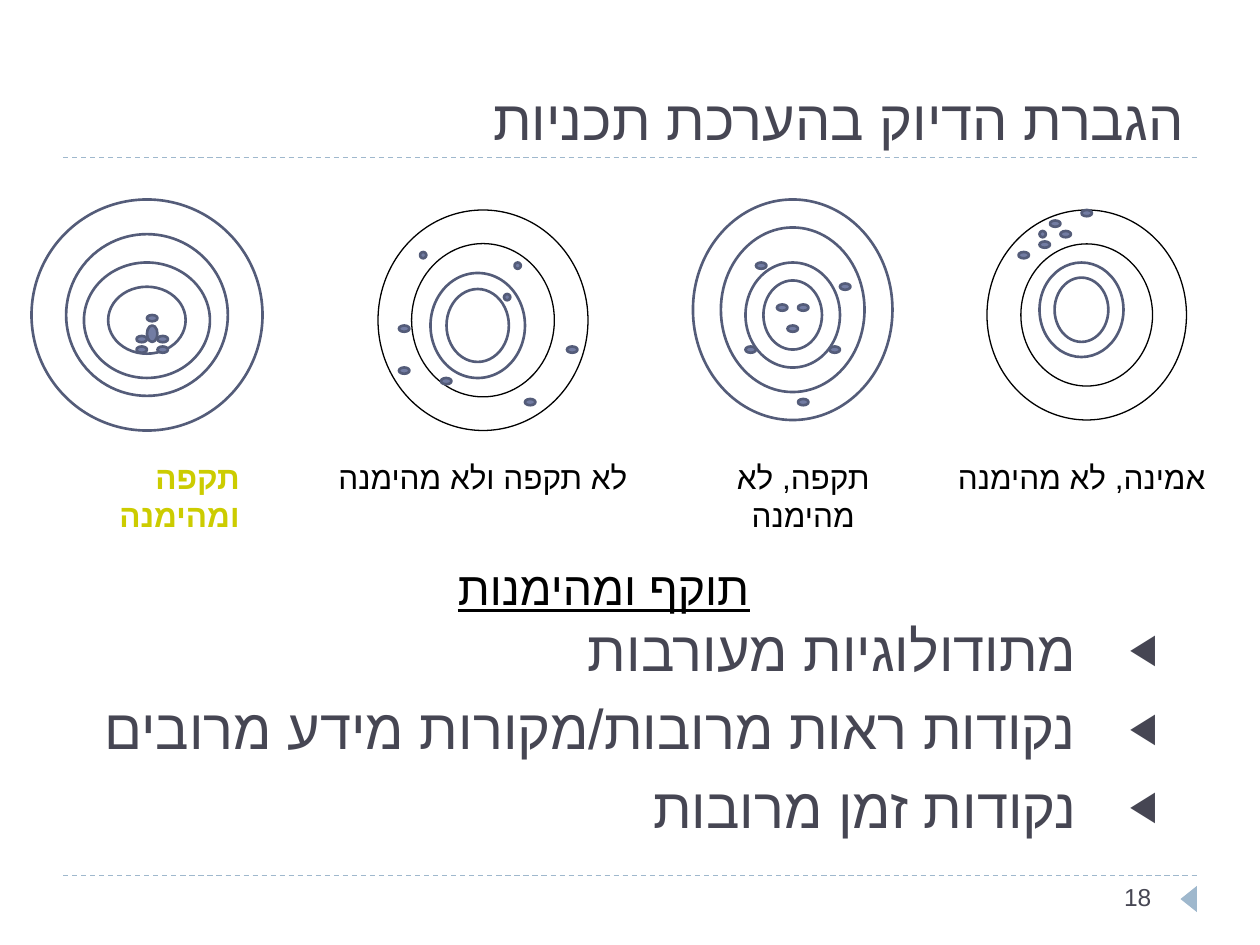
from lxml.etree import SubElement
from pptx import Presentation
from pptx.dml.color import RGBColor
from pptx.enum.dml import MSO_LINE
from pptx.enum.shapes import MSO_CONNECTOR, MSO_SHAPE
from pptx.enum.text import MSO_ANCHOR, PP_ALIGN
from pptx.oxml.ns import qn
from pptx.util import Pt

COLORS = {"ink": "464653", "black": "000000", "white": "FFFFFF", "lime": "CCCC00",
          "dot": "727CA3", "edge": "545C79", "rule": "9FB8CD"}
COLORS = {name: RGBColor.from_string(value) for name, value in COLORS.items()}

prs = Presentation()
prs.slide_width, prs.slide_height = Pt(720), Pt(540)
s = prs.slides.add_slide(prs.slide_layouts[6])


def add_shape(kind, box, fill=None, line=None, width=1.5):
    sp = s.shapes.add_shape(kind, *[Pt(v) for v in box])
    sp.shadow.inherit = False
    if fill:
        sp.fill.solid()
        sp.fill.fore_color.rgb = COLORS[fill]
    else:
        sp.fill.background()
    if line:
        sp.line.color.rgb = COLORS[line]
        sp.line.width = Pt(width)
    else:
        sp.line.fill.background()
    return sp


def add_text(box, lines, align, color, anchor=MSO_ANCHOR.TOP, **font):
    tf = s.shapes.add_textbox(*[Pt(v) for v in box]).text_frame
    tf.word_wrap = True
    tf.vertical_anchor = anchor
    for i, line in enumerate(lines):
        p = tf.paragraphs[0] if i == 0 else tf.add_paragraph()
        p.alignment = align
        p._p.get_or_add_pPr().set("rtl", "1")
        r = p.add_run()
        r.text = line
        r.font.name = "Arial"
        r.font.color.rgb = COLORS[color]
        for key, value in font.items():
            setattr(r.font, key, value)
        SubElement(r._r.get_or_add_rPr(), qn("a:cs")).set("typeface", "Arial")
    return tf


for y in (500.4, 90):
    c = s.shapes.add_connector(MSO_CONNECTOR.STRAIGHT, Pt(36), Pt(y), Pt(684), Pt(y))
    c.line.color.rgb = COLORS["rule"]
    c.line.width = Pt(0.75)
    c.line.dash_style = MSO_LINE.DASH
    SubElement(c._element.spPr, qn("a:effectLst"))
add_shape(MSO_SHAPE.ISOSCELES_TRIANGLE, (671.8, 509, 15, 9.4), "rule").rotation = 270

rings = [
    ((564, 120, 114, 120), 0.17, "white", "black", 0.75),
    ((594, 150, 48, 54), 0.18, None, "edge", 1.5),
    ((396, 114, 114, 126), 0.14, None, "edge", 1.5),
    ((426, 150, 54, 60), 0.19, None, "edge", 1.5),
    ((216, 120, 120, 126), 0.16, None, "black", 0.75),
    ((246, 156, 54, 60), 0.17, None, "edge", 1.5),
    ((18, 114, 132, 132), 0.15, None, "edge", 1.5),
    ((48, 150, 72, 66), 0.21, None, "edge", 1.5),
]
for box, thickness, fill, line, width in rings:
    add_shape(MSO_SHAPE.DONUT, box, fill, line, width).adjustments[0] = thickness

wide_hits = [
    (606, 132), (618, 120), (582, 144), (594, 138), (600, 126),
    (450, 186), (456, 174), (480, 162), (426, 198), (456, 228), (432, 150), (474, 198),
    (444, 174), (324, 198), (228, 186), (228, 210), (300, 228), (252, 216),
    (90, 192), (90, 198), (78, 192), (78, 198), (84, 180),
]
round_hits = [(594, 132), (240, 144), (294, 150), (288, 168)]
tall_hits = [(84, 186)]
for hits, w, h in ((wide_hits, 6, 3.6), (round_hits, 3.6, 3.6), (tall_hits, 6, 9.4)):
    for x, y in hits:
        add_shape(MSO_SHAPE.OVAL, (x, y, w, h), "dot", "edge")

add_text((36, 12, 648, 78), ["הגברת הדיוק בהערכת תכניות"], PP_ALIGN.RIGHT, "ink",
         MSO_ANCHOR.BOTTOM, size=Pt(32))

points = ["מתודולוגיות מעורבות", "נקודות ראות מרובות/מקורות מידע מרובים", "נקודות זמן מרובות"]
tf = add_text((30, 348, 660, 144), points, PP_ALIGN.RIGHT, "ink", size=Pt(32))
for p in tf.paragraphs:
    p.level = 1
    p.space_before = Pt(6.5)
    pPr = p._p.get_or_add_pPr()
    for key, value in {"marL": Pt(67.5), "indent": Pt(-46)}.items():
        pPr.set(key, str(int(value)))
    SubElement(pPr, qn("a:buSzPct")).set("val", "76000")
    SubElement(pPr, qn("a:buFont")).set("typeface", "Arial")
    SubElement(pPr, qn("a:buChar")).set("char", "◀")

add_text((186, 316, 318, 41), ["תוקף ומהימנות"], PP_ALIGN.CENTER, "black",
         size=Pt(26.5), underline=True)
captions = [
    (536, 160, "אמינה, לא מהימנה", PP_ALIGN.RIGHT, "black", False),
    (384, 150, "תקפה, לא מהימנה", PP_ALIGN.CENTER, "black", False),
    (174, 204, "לא תקפה ולא מהימנה", PP_ALIGN.CENTER, "black", False),
    (12, 132, "תקפה ומהימנה", PP_ALIGN.RIGHT, "lime", True),
]
for x, w, text, align, color, bold in captions:
    add_text((x, 258, w, 29), [text], align, color, size=Pt(18), bold=bold)
add_text((509, 500.4, 156, 29), ["18"], PP_ALIGN.RIGHT, "ink", size=Pt(14))

prs.save("out.pptx")
